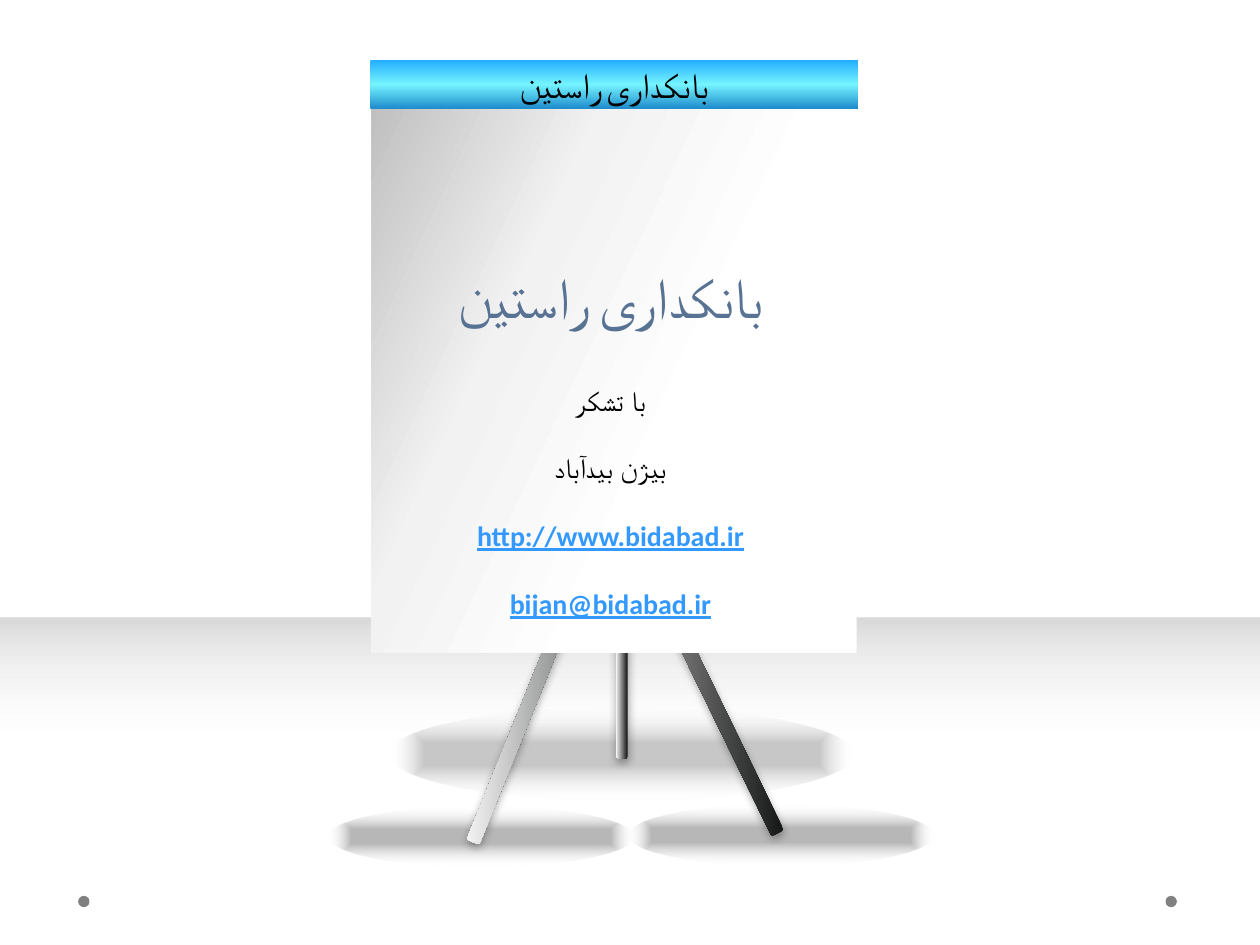
from dataclasses import dataclass
from typing import Optional

import pptx
import pptx.dml.color
import pptx.enum.shapes
import pptx.enum.text
import pptx.oxml
import pptx.oxml.ns
import pptx.util

Inches = pptx.util.Inches
Shapes = pptx.enum.shapes.MSO_SHAPE
Anchor = pptx.enum.text.MSO_ANCHOR
NAMESPACE = pptx.oxml.ns.nsdecls("a")


@dataclass(frozen=True)
class Stop:
    position: int
    color: str
    alpha: int = 100


@dataclass(frozen=True)
class Gradient:
    stops: tuple[Stop, ...]
    angle: Optional[int] = None
    turns_with_shape: bool = True


@dataclass(frozen=True)
class Part:
    box: tuple[float, float, float, float]
    fill: Gradient | str
    kind: int = Shapes.RECTANGLE
    rotation: int = 0
    shadow: bool = False


def rgb(color: str) -> pptx.dml.color.RGBColor:
    return pptx.dml.color.RGBColor.from_string(color)


def gradient_element(gradient: Gradient):
    stops = "".join(
        f'<a:gs pos="{stop.position * 1000}"><a:srgbClr val="{stop.color}">'
        f'<a:alpha val="{stop.alpha * 1000}"/></a:srgbClr></a:gs>'
        for stop in gradient.stops
    )
    if gradient.angle is None:
        direction = (
            '<a:path path="shape"><a:fillToRect l="50000" t="50000" '
            'r="50000" b="50000"/></a:path>'
        )
    else:
        direction = f'<a:lin ang="{gradient.angle * 60000}" scaled="0"/>'
    return pptx.oxml.parse_xml(
        f'<a:gradFill {NAMESPACE} rotWithShape="{int(gradient.turns_with_shape)}">'
        f"<a:gsLst>{stops}</a:gsLst>{direction}</a:gradFill>"
    )


def draw_part(shapes, part: Part):
    shape = shapes.add_shape(part.kind, *map(Inches, part.box))
    shape.rotation = part.rotation
    shape.line.fill.background()
    shape.shadow.inherit = False
    shape.fill.solid()
    properties = shape.element.spPr
    if isinstance(part.fill, str):
        shape.fill.fore_color.rgb = rgb(part.fill)
    else:
        solid = properties.find(pptx.oxml.ns.qn("a:solidFill"))
        properties.replace(solid, gradient_element(part.fill))
    if part.shadow:
        effects = properties.find(pptx.oxml.ns.qn("a:effectLst"))
        effects.append(pptx.oxml.parse_xml(
            f'<a:outerShdw {NAMESPACE} blurRad="63500" dist="22860" dir="5400000" '
            'rotWithShape="0"><a:srgbClr val="000000"><a:alpha val="35000"/>'
            "</a:srgbClr></a:outerShdw>"
        ))
    return shape


def write(paragraph, text: str, *, size: int, color: str, font: str = "Arial",
          rtl: bool = True, link_style: bool = False, before: float = 0) -> None:
    properties = paragraph._p.get_or_add_pPr()
    properties.set("marL", "0")
    properties.set("indent", "0")
    properties.set("rtl", str(int(rtl)))
    properties.append(pptx.oxml.parse_xml(f"<a:buNone {NAMESPACE}/>"))
    paragraph.alignment = pptx.enum.text.PP_ALIGN.CENTER
    paragraph.space_before = pptx.util.Pt(before)
    run = paragraph.add_run()
    run.text = text
    run.font.name = font
    run.font.size = pptx.util.Pt(size)
    run.font.color.rgb = rgb(color)
    run.font.bold = link_style
    run.font.underline = link_style
    run.font._element.append(
        pptx.oxml.parse_xml(f'<a:cs {NAMESPACE} typeface="{font}"/>')
    )


def place(placeholder, box: tuple[float, float, float, float], anchor):
    placeholder.left, placeholder.top, placeholder.width, placeholder.height = map(Inches, box)
    placeholder.element.getparent().append(placeholder.element)
    frame = placeholder.text_frame
    frame.word_wrap = True
    frame.auto_size = pptx.enum.text.MSO_AUTO_SIZE.NONE
    frame.vertical_anchor = anchor
    return frame


def floor_shadow(box: tuple[float, float, float, float], alpha: int) -> Part:
    stops = (Stop(24, "000000", alpha), Stop(100, "FFFFFF", 0))
    return Part(box, Gradient(stops), Shapes.OVAL)


def leg(box: tuple[float, float, float, float], rotation: int = 0) -> Part:
    stops = (Stop(0, "151616"), Stop(100, "F3F3F3"), Stop(100, "A6A6A6"))
    return Part(box, Gradient(stops, 180, False), Shapes.ROUNDED_RECTANGLE, rotation, True)


BACKGROUND = [
    *(Part((left, 7.11, 0.09, 0.09), "808080", Shapes.OVAL) for left in (9.25, 0.62)),
    Part((0, 4.9, 10, 2.6),
         Gradient((Stop(61, "FFFFFF", 0), Stop(100, "D9D9D9")), 270)),
]
EASEL = [
    floor_shadow((3.09, 5.62, 3.68, 0.73), 22),
    floor_shadow((4.99, 6.39, 2.42, 0.48), 28),
    floor_shadow((2.61, 6.4, 2.42, 0.48), 28),
    leg((4.5, 2.56, 0.11, 4.28), 22),
    leg((4.89, 1.74, 0.09, 4.28)),
    leg((5.18, 2.55, 0.11, 4.28), 334),
    Part((2.95, 0.79, 3.85, 4.39),
         Gradient((Stop(38, "FFFFFF"), Stop(68, "F2F2F2"), Stop(100, "BFBFBF")), 205)),
]
BANNER = Part(
    (2.94, 0.48, 3.87, 0.38),
    Gradient((Stop(0, "25AFFF"), Stop(50, "74F4FF"), Stop(100, "208ECD")), 90),
)
NAME = "بانکداری راستین"
THANKS = ["با تشکر", "بیژن بیدآباد"]
CONTACTS = ["http://www.bidabad.ir", "bijan@bidabad.ir"]


def main() -> None:
    presentation = pptx.Presentation()
    presentation.slide_width, presentation.slide_height = Inches(10), Inches(7.5)
    slide = presentation.slides.add_slide(presentation.slide_layouts[1])

    for part in BACKGROUND:
        draw_part(slide.shapes, part)
    easel = slide.shapes.add_group_shape()
    for part in EASEL:
        draw_part(easel.shapes, part)
    banner = draw_part(easel.shapes, BANNER)
    banner.text_frame.vertical_anchor = Anchor.MIDDLE
    write(banner.text_frame.paragraphs[0], NAME, size=20, color="000000",
          font="Calibri", rtl=False)

    title = place(slide.shapes.title, (2.92, 1.02, 3.85, 1.65), Anchor.BOTTOM)
    write(title.paragraphs[0], NAME, size=32, color="577293")

    body = place(slide.placeholders[1], (3.52, 2.99, 2.65, 1.99), Anchor.TOP)
    for index, line in enumerate(THANKS + CONTACTS):
        paragraph = body.add_paragraph() if index else body.paragraphs[0]
        contact = line in CONTACTS
        write(paragraph, line, size=16, color="3399FF" if contact else "000000",
              font="Calibri" if contact else "Arial", link_style=contact,
              before=19.5 if index else 0)

    presentation.save("out.pptx")


if __name__ == "__main__":
    main()
